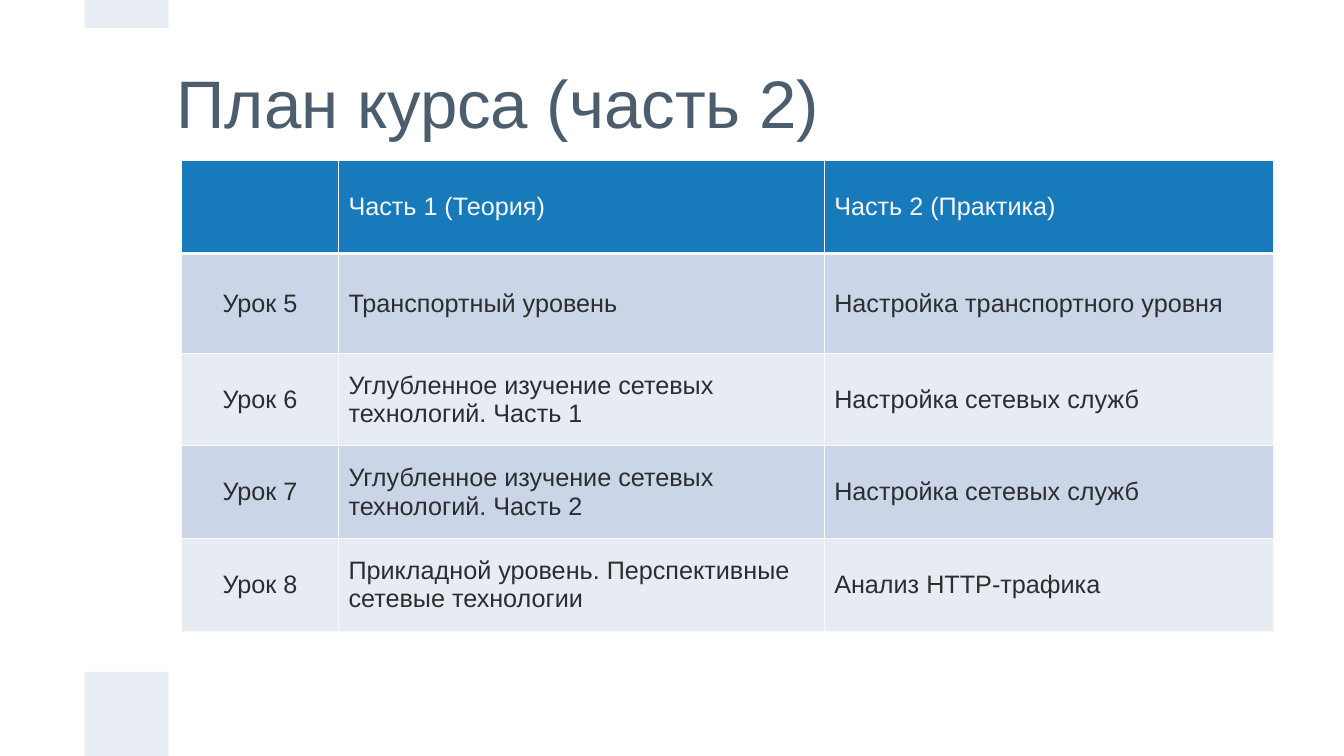
from lxml.etree import SubElement
from pptx import Presentation
from pptx.dml.color import RGBColor
from pptx.enum.shapes import MSO_SHAPE
from pptx.enum.text import MSO_ANCHOR, PP_ALIGN
from pptx.oxml.ns import qn
from pptx.util import Pt


def color(hex_code):
    return RGBColor.from_string(hex_code)


class CourseSlide:
    FONT = "Arial"
    TITLE = "4C5D6E"
    ACCENT = "E9EDF4"
    HEADER = "177BBB"
    BANDS = ("CAD6E7", "E7ECF3")
    LIGHT = "F9F9FB"
    DARK = "2C2D30"

    def __init__(self, presentation):
        self.slide = presentation.slides.add_slide(presentation.slide_layouts[5])

    def style_text(self, paragraph, size, hex_code, align):
        paragraph.alignment = align
        for run in paragraph.runs:
            run.font.name = self.FONT
            run.font.size = Pt(size)
            run.font.bold = False
            run.font.color.rgb = color(hex_code)

    def accent(self, left, top, width, height):
        block = self.slide.shapes.add_shape(
            MSO_SHAPE.RECTANGLE, Pt(left), Pt(top), Pt(width), Pt(height))
        block.shadow.inherit = False
        block.fill.solid()
        block.fill.fore_color.rgb = color(self.ACCENT)
        block.line.fill.background()

    def title(self, wording, left, top, width, height):
        heading = self.slide.shapes.title
        heading.left, heading.top = Pt(left), Pt(top)
        heading.width, heading.height = Pt(width), Pt(height)
        frame = heading.text_frame
        frame.text = wording
        frame.word_wrap = True
        frame.vertical_anchor = MSO_ANCHOR.MIDDLE
        frame.paragraphs[0].line_spacing = 0.9
        self.style_text(frame.paragraphs[0], 48, self.TITLE, PP_ALIGN.LEFT)

    def border(self, cell, side, width):
        properties = cell._tc.get_or_add_tcPr()
        edge = SubElement(properties, qn(f"a:ln{side}"), w=str(Pt(width)))
        fill = SubElement(edge, qn("a:solidFill"))
        SubElement(fill, qn("a:srgbClr"), val=self.LIGHT)

    def cell(self, cell, wording, row, column):
        for side in "LRTB":
            under_header = (row, side) in ((0, "B"), (1, "T"))
            self.border(cell, side, 3 if under_header else 1)
        cell.fill.solid()
        cell.fill.fore_color.rgb = color(
            self.BANDS[(row - 1) % 2] if row else self.HEADER)
        cell.vertical_anchor = MSO_ANCHOR.MIDDLE
        cell.text_frame.text = wording
        self.style_text(cell.text_frame.paragraphs[0], 18,
                        self.DARK if row else self.LIGHT,
                        PP_ALIGN.LEFT if column else PP_ALIGN.CENTER)

    def table(self, lessons, left, top, widths, heights):
        plan = self.slide.shapes.add_table(
            len(heights), len(widths), Pt(left), Pt(top),
            Pt(sum(widths)), Pt(sum(heights))).table
        for column, width in zip(plan.columns, widths):
            column.width = Pt(width)
        for row, height in zip(plan.rows, heights):
            row.height = Pt(height)
        for row, lesson in enumerate(lessons):
            for column, wording in enumerate(lesson):
                self.cell(plan.cell(row, column), wording, row, column)


def main():
    presentation = Presentation()
    presentation.slide_width, presentation.slide_height = Pt(960), Pt(540)
    course = CourseSlide(presentation)
    course.accent(60.5, 0, 60, 20)
    course.accent(60.5, 480, 60, 60)
    course.title("План курса (часть 2)", 119, 16.5, 722, 119)
    lessons = [
        ("", "Часть 1 (Теория)", "Часть 2 (Практика)"),
        ("Урок 5", "Транспортный уровень", "Настройка транспортного уровня"),
        ("Урок 6", "Углубленное изучение сетевых технологий. Часть 1",
         "Настройка сетевых служб"),
        ("Урок 7", "Углубленное изучение сетевых технологий. Часть 2",
         "Настройка сетевых служб"),
        ("Урок 8", "Прикладной уровень. Перспективные сетевые технологии",
         "Анализ HTTP-трафика"),
    ]
    course.table(lessons, 129.75, 114.75, (112, 347, 321.25),
                 (66.25, 71.25, 66.25, 66.25, 66.25))
    presentation.save("out.pptx")


if __name__ == "__main__":
    main()
